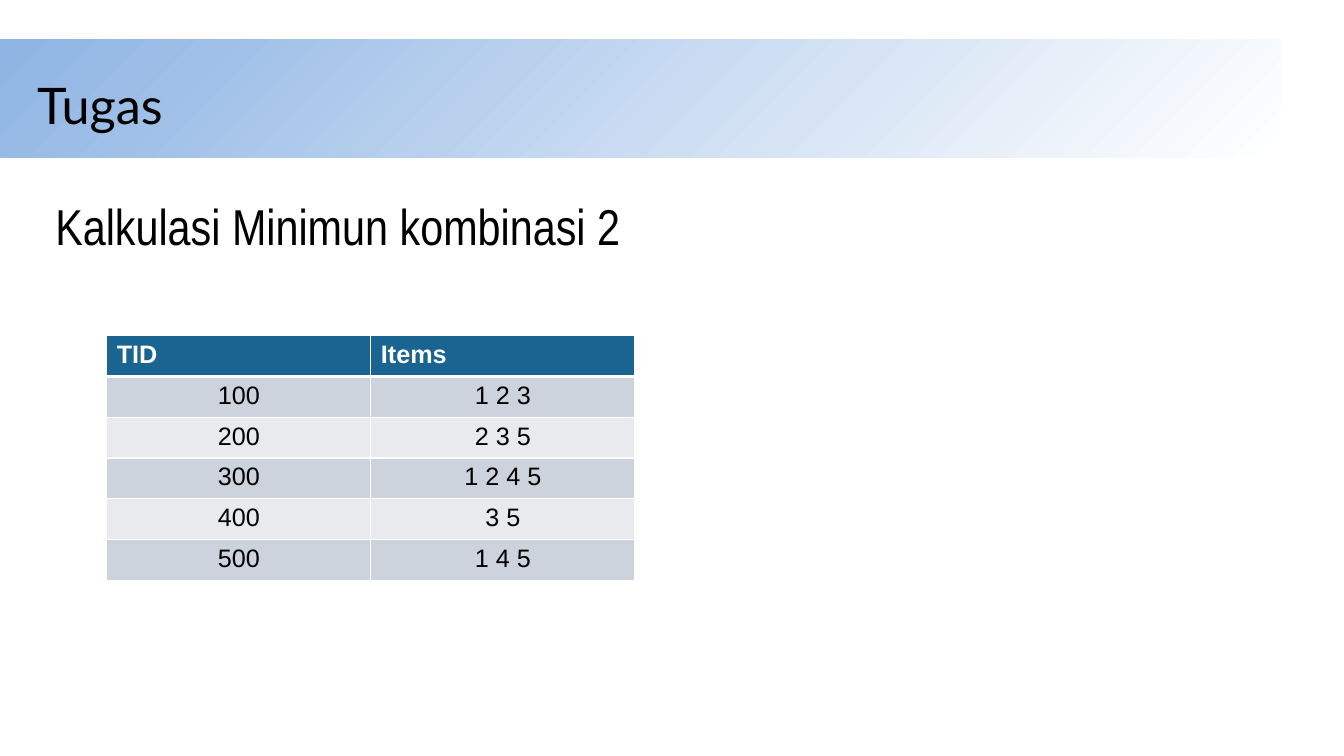
import pptx
import pptx.dml.color
import pptx.enum.shapes
import pptx.enum.text
import pptx.oxml
import pptx.oxml.ns
import pptx.util

PX = 4572
THEME = {
    "black": "000000", "white": "FFFFFF", "band_start": "8EB4E3",
    "header": "196491", "odd": "CCD3DC", "even": "E8EAEE",
    "heading_size": 36, "table_size": 18,
    "title_font": "Lato", "task_font": "Arial Narrow", "table_font": "Arial",
}


def box(*lengths):
    return [n * PX for n in lengths]


def write(tf, text, font, size, color, bold, align):
    p = tf.paragraphs[0]
    p.alignment = align
    r = p.add_run()
    r.text = text
    values = {"name": font, "size": pptx.util.Pt(size), "bold": bold}
    for key, value in values.items():
        setattr(r.font, key, value)
    r.font.color.rgb = pptx.dml.color.RGBColor.from_string(color)


LEFT = pptx.enum.text.PP_ALIGN.LEFT
CENTER = pptx.enum.text.PP_ALIGN.CENTER

prs = pptx.Presentation()
prs.slide_width, prs.slide_height = box(2667, 1500)
s = prs.slides.add_slide(prs.slide_layouts[6])

band = s.shapes.add_shape(pptx.enum.shapes.MSO_SHAPE.RECTANGLE, *box(0, 78, 2542, 234))
band.shadow.inherit = False
band.line.fill.background()
band.fill.gradient()
band.fill.gradient_angle = 315
for stop, position, color in zip(band.fill.gradient_stops, (0, 1), ("band_start", "white")):
    stop.position = position
    stop.color.rgb = pptx.dml.color.RGBColor.from_string(THEME[color])

headings = [
    ("Tugas", "title_font", (54, 138, 646, 142)),
    ("Kalkulasi Minimun kombinasi 2", "task_font", (90, 378, 1350, 142)),
]
for text, font, place in headings:
    tf = s.shapes.add_textbox(*box(*place)).text_frame
    tf.word_wrap = True
    tf.auto_size = pptx.enum.text.MSO_AUTO_SIZE.SHAPE_TO_FIT_TEXT
    write(tf, text, THEME[font], THEME["heading_size"], THEME["black"], False, LEFT)

transactions = [
    ("TID", "Items"),
    ("100", "1 2 3"),
    ("200", "2 3 5"),
    ("300", "1 2 4 5"),
    ("400", "3 5"),
    ("500", "1 4 5"),
]
table = s.shapes.add_table(len(transactions), 2, *box(212, 666, 1048, 486)).table
for column in table.columns:
    column.width = 524 * PX
for i, transaction in enumerate(transactions):
    table.rows[i].height = 81 * PX
    is_header = i == 0
    fill = "header" if is_header else "odd" if i % 2 else "even"
    for j, text in enumerate(transaction):
        cell = table.cell(i, j)
        tcPr = cell._tc.get_or_add_tcPr()
        for side in "LRTB":
            thick = (is_header and side == "B") or (i == 1 and side == "T")
            width = pptx.util.Pt(3 if thick else 1)
            tcPr.append(pptx.oxml.parse_xml(
                f'<a:ln{side} {pptx.oxml.ns.nsdecls("a")} w="{width}"><a:solidFill>'
                f'<a:srgbClr val="{THEME["white"]}"/></a:solidFill></a:ln{side}>'))
        cell.fill.solid()
        cell.fill.fore_color.rgb = pptx.dml.color.RGBColor.from_string(THEME[fill])
        write(cell.text_frame, text, THEME["table_font"], THEME["table_size"],
              THEME["white" if is_header else "black"], is_header,
              LEFT if is_header else CENTER)

prs.save("out.pptx")
